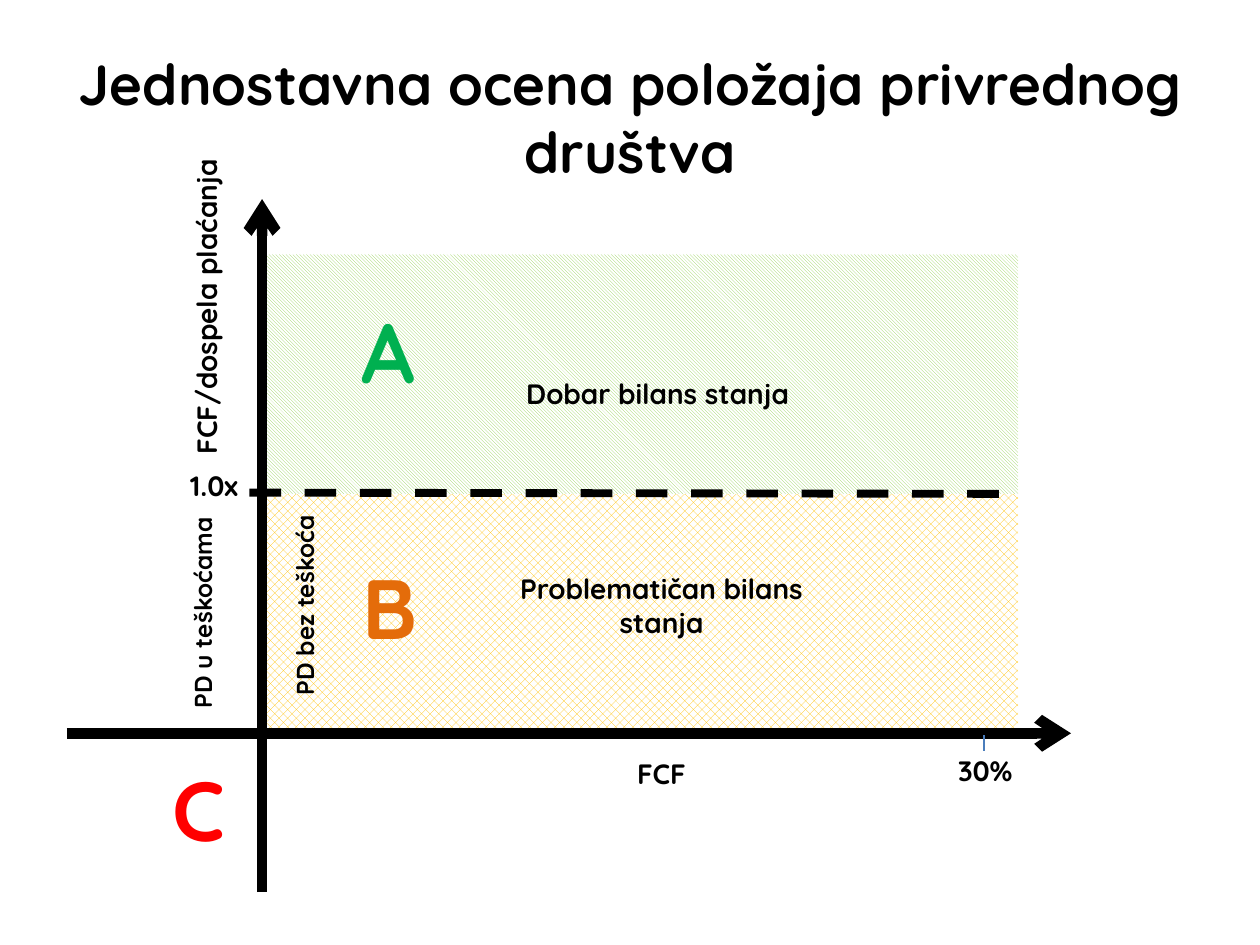
from dataclasses import dataclass

from lxml.etree import SubElement
from pptx import Presentation
from pptx.dml.color import RGBColor
from pptx.enum.dml import MSO_LINE, MSO_PATTERN
from pptx.enum.shapes import MSO_CONNECTOR, MSO_SHAPE
from pptx.enum.text import MSO_ANCHOR, MSO_AUTO_SIZE, PP_ALIGN
from pptx.oxml.ns import qn
from pptx.util import Pt

SCALE = 9144  # EMU per px, 100 px to the inch


@dataclass(frozen=True)
class Theme:
    font: str = "Quicksand"
    black: str = "000000"
    white: str = "FFFFFF"
    good: str = "92D050"
    weak: str = "FFC000"
    green: str = "00B050"
    orange: str = "E46C0A"
    red: str = "FF0000"
    blue: str = "4B7EBC"
    title: float = 32.4
    grade: float = 48
    label: float = 16
    small: float = 14


THEME = Theme()


def px(*nums):
    return [num * SCALE for num in nums]


def rgb(code):
    return RGBColor.from_string(code)


def write(shape, text, size=THEME.label, color=THEME.black,
          anchor=MSO_ANCHOR.MIDDLE, wrap=True, fit=MSO_AUTO_SIZE.NONE):
    frame = shape.text_frame
    frame.word_wrap = wrap
    frame.auto_size = fit
    frame.vertical_anchor = anchor
    para = frame.paragraphs[0]
    para.alignment = PP_ALIGN.CENTER
    run = para.add_run()
    run.text = text
    run.font.name = THEME.font
    run.font.size = Pt(size)
    run.font.bold = True
    run.font.color.rgb = rgb(color)


def label(slide, text, box, turn=0, **style):
    shape = slide.shapes.add_textbox(*px(*box))
    shape.rotation = turn
    write(shape, text, **style)


def block(slide, box, turn=0):
    shape = slide.shapes.add_shape(MSO_SHAPE.RECTANGLE, *px(*box))
    shape.shadow.inherit = False
    shape.line.fill.background()
    shape.rotation = turn
    return shape


def plate(slide, text, box, **style):
    shape = block(slide, box, turn=270)
    shape.fill.solid()
    shape.fill.fore_color.rgb = rgb(THEME.white)
    write(shape, text, **style)


def zone(slide, box, pattern, color):
    fill = block(slide, box).fill
    fill.patterned()
    fill.pattern = pattern
    fill.fore_color.rgb = rgb(color)
    fill.back_color.rgb = rgb(THEME.white)


def rule(slide, ends, width, color=THEME.black, dash=None, arrow=False):
    link = slide.shapes.add_connector(MSO_CONNECTOR.STRAIGHT, *px(*ends))
    link.line.width = Pt(width)
    link.line.color.rgb = rgb(color)
    if dash:
        link.line.dash_style = dash
    props = link._element.spPr
    if arrow:
        SubElement(props.find(qn("a:ln")), qn("a:tailEnd"), type="arrow")
    SubElement(props, qn("a:effectLst"))


def grade(slide, text, box, color):
    label(slide, text, box, size=THEME.grade, color=color, wrap=False,
          anchor=MSO_ANCHOR.TOP, fit=MSO_AUTO_SIZE.SHAPE_TO_FIT_TEXT)


def main():
    deck = Presentation()
    deck.slide_width, deck.slide_height = px(1000, 750)
    slide = deck.slides.add_slide(deck.slide_layouts[5])

    # Title
    title = slide.shapes.title
    title.left, title.top, title.width, title.height = px(50, 30, 900, 125)
    write(title, "Jednostavna ocena položaja privrednog društva",
          size=THEME.title)

    # Zones above and below the 1.0x limit
    plate(slide, "PD u teškoćama", (70, 458, 181, 57), size=THEME.small)
    zone(slide, (208, 392, 600, 190), MSO_PATTERN.PERCENT_50, THEME.weak)
    zone(slide, (208, 202, 600, 190),
         MSO_PATTERN.DARK_DOWNWARD_DIAGONAL, THEME.good)
    label(slide, "Dobar bilans stanja", (376, 284, 292, 57))
    label(slide, "Problematičan bilans stanja", (379, 452, 292, 57))
    grade(slide, "A", (273, 233, 70, 91), THEME.green)
    grade(slide, "B", (278, 436, 59, 91), THEME.orange)

    # Axes and limit
    rule(slide, (208, 708, 208, 158), 6, arrow=True)
    rule(slide, (53, 582, 850, 582), 6, arrow=True)
    rule(slide, (198, 391, 808, 392), 4.5, dash=MSO_LINE.DASH)

    # Axis names and marks
    label(slide, "FCF", (379, 585, 292, 57))
    plate(slide, "FCF/dospela plaćanja", (28, 215, 271, 57))
    label(slide, "30%", (738, 583, 88, 57))
    rule(slide, (781, 596, 781, 583), 0.75, color=THEME.blue)
    label(slide, "1.0x", (126, 357, 88, 57))

    # Left of the axis and beside it
    grade(slide, "C", (121, 596, 73, 91), THEME.red)
    label(slide, "PD bez teškoća", (151, 452, 181, 57), turn=270,
          size=THEME.small)

    deck.save("out.pptx")


if __name__ == "__main__":
    main()
